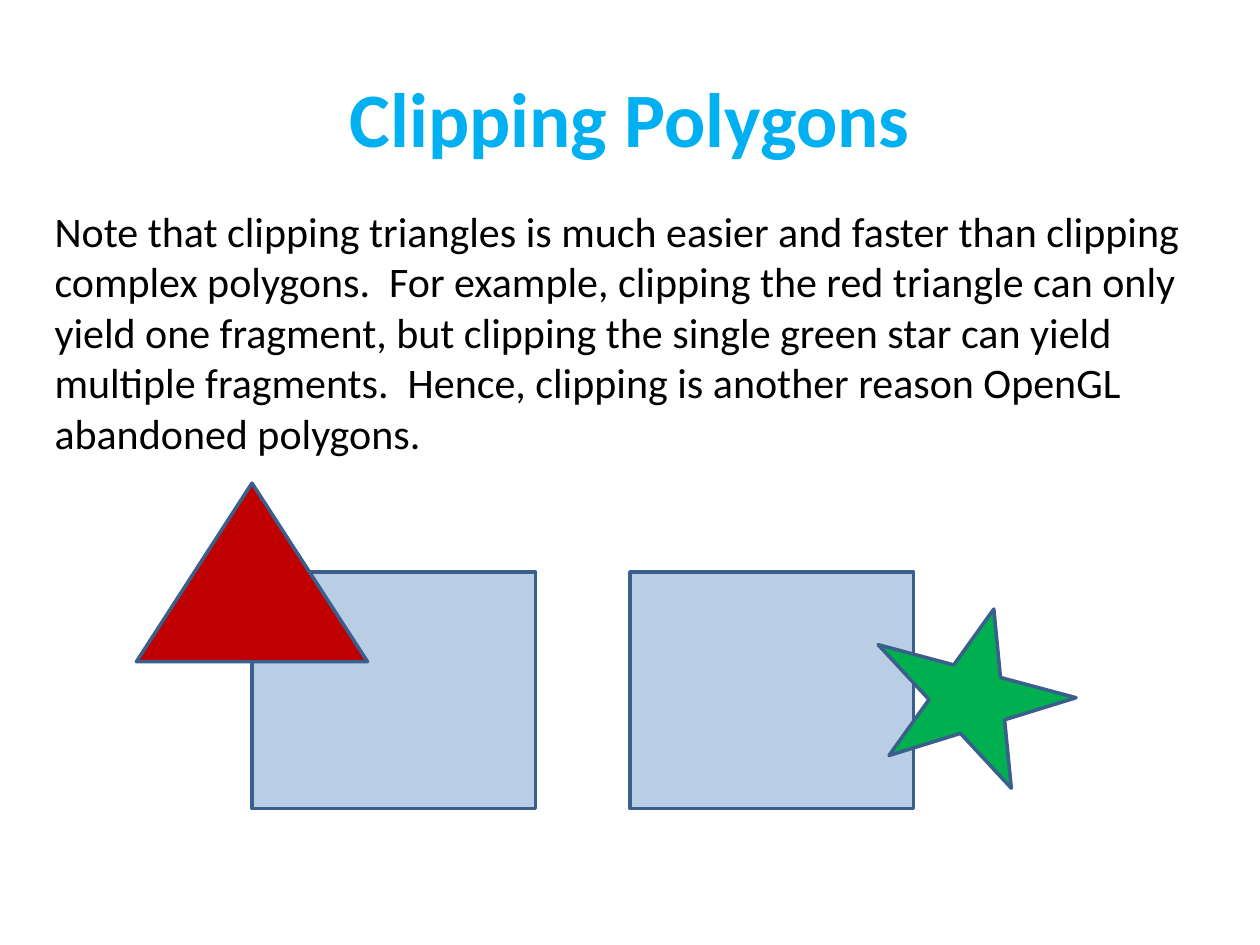
from dataclasses import dataclass

from pptx import Presentation
from pptx.dml.color import RGBColor
from pptx.enum.shapes import MSO_SHAPE as Preset
from pptx.enum.text import MSO_ANCHOR as Anchor, PP_ALIGN as Align
from pptx.util import Cm, Pt


@dataclass(frozen=True)
class Theme:
    font: str = "Calibri"
    title_size: int = 44
    body_size: int = 24
    line_width: int = 2
    title: str = "00B0F0"
    text: str = "000000"
    window: str = "B9CDE5"
    triangle: str = "C00000"
    star: str = "00B050"
    outline: str = "3A5F8C"


THEME = Theme()
TITLE_ONLY = 5

NOTE = (
    "Note that clipping triangles is much easier and faster than clipping "
    "complex polygons.  For example, clipping the red triangle can only "
    "yield one fragment, but clipping the single green star can yield "
    "multiple fragments.  Hence, clipping is another reason OpenGL "
    "abandoned polygons."
)


def write_text(frame, text, *, size, color, bold=False,
               align=Align.LEFT, anchor=Anchor.TOP):
    frame.word_wrap = True
    frame.vertical_anchor = anchor
    paragraph = frame.paragraphs[0]
    paragraph.alignment = align
    run = paragraph.add_run()
    run.text = text
    run.font.name = THEME.font
    run.font.size = Pt(size)
    run.font.bold = bold
    run.font.color.rgb = RGBColor.from_string(color)


def place_title(slide, text, left, top, width, height):
    title = slide.shapes.title
    title.left, title.top = Cm(left), Cm(top)
    title.width, title.height = Cm(width), Cm(height)
    write_text(title.text_frame, text, size=THEME.title_size,
               color=THEME.title, bold=True, align=Align.CENTER,
               anchor=Anchor.MIDDLE)


def add_note(slide, text, left, top, width, height):
    note = slide.shapes.add_textbox(Cm(left), Cm(top), Cm(width), Cm(height))
    write_text(note.text_frame, text, size=THEME.body_size, color=THEME.text)


def add_polygon(slide, preset, left, top, width, height, fill, rotation=0):
    polygon = slide.shapes.add_shape(
        preset, Cm(left), Cm(top), Cm(width), Cm(height))
    polygon.shadow.inherit = False
    polygon.rotation = rotation
    polygon.fill.solid()
    polygon.fill.fore_color.rgb = RGBColor.from_string(fill)
    polygon.line.color.rgb = RGBColor.from_string(THEME.outline)
    polygon.line.width = Pt(THEME.line_width)


def main():
    deck = Presentation()
    deck.slide_width, deck.slide_height = Cm(25.4), Cm(19.05)
    slide = deck.slides.add_slide(deck.slide_layouts[TITLE_ONLY])

    # Title and explanation
    place_title(slide, "Clipping Polygons", 1.27, 0.76, 22.86, 3.18)
    add_note(slide, NOTE, 0.85, 4.02, 24.13, 12.57)

    # Clip windows, each with the polygon that crosses its edge
    cases = [
        (5.08, (Preset.ISOSCELES_TRIANGLE, 2.75, 9.74, 4.66, 3.6,
                THEME.triangle)),
        (12.7, (Preset.STAR_5_POINT, 17.53, 12.22, 4.13, 3.4,
                THEME.star, 15)),
    ]
    for window_left, clipped in cases:
        add_polygon(slide, Preset.RECTANGLE, window_left, 11.53, 5.72, 4.77,
                    THEME.window)
        add_polygon(slide, *clipped)

    deck.save("out.pptx")


if __name__ == "__main__":
    main()
